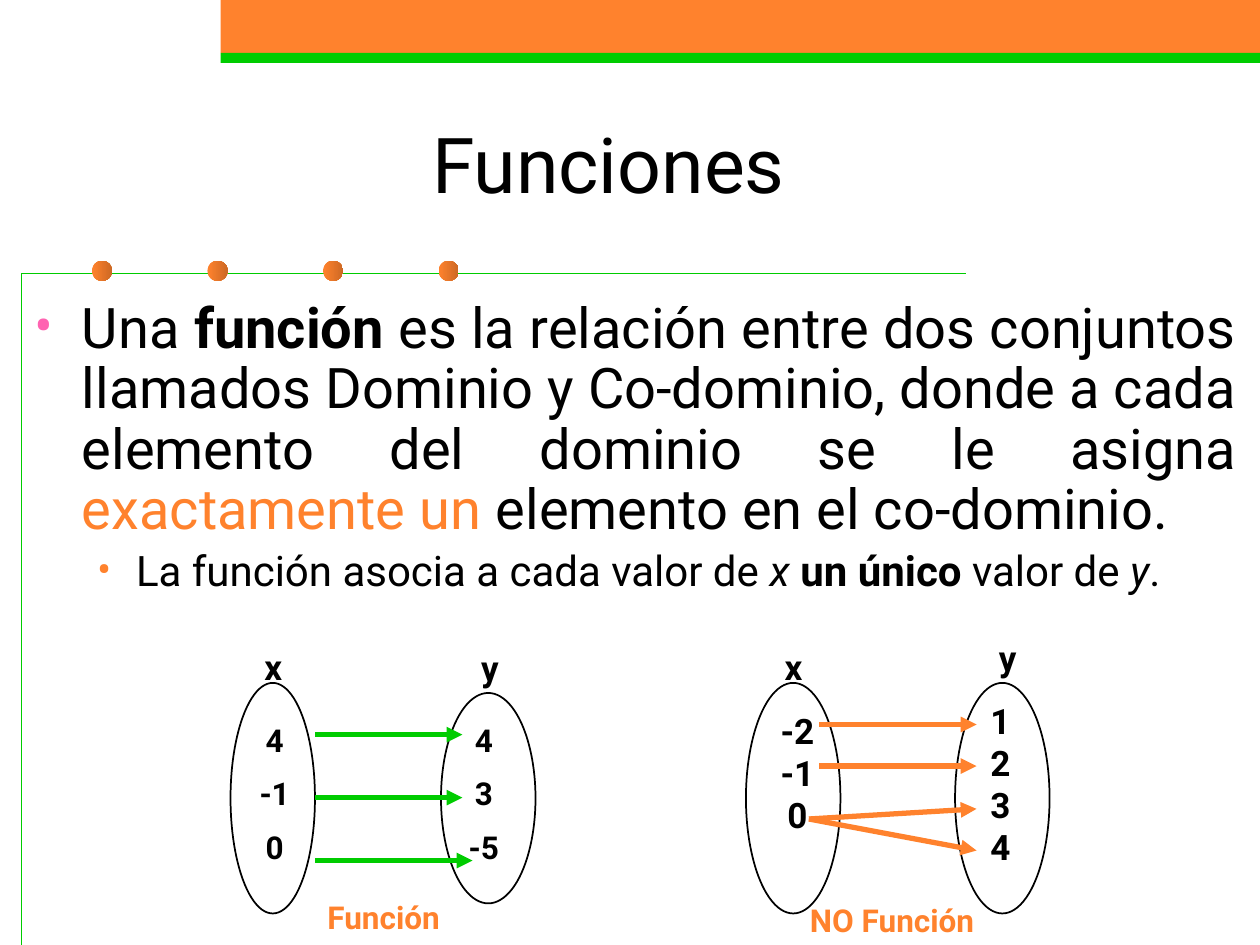
from lxml import etree
from pptx import Presentation
from pptx.dml.color import RGBColor
from pptx.enum.shapes import MSO_CONNECTOR, MSO_SHAPE
from pptx.enum.text import MSO_ANCHOR, MSO_AUTO_SIZE, PP_ALIGN
from pptx.oxml.ns import qn
from pptx.util import Inches, Pt

RECT, OVAL, LINE = MSO_SHAPE.RECTANGLE, MSO_SHAPE.OVAL, MSO_CONNECTOR.STRAIGHT
LEFT, CENTER, JUST = PP_ALIGN.LEFT, PP_ALIGN.CENTER, PP_ALIGN.JUSTIFY
MIDDLE, TOP, FIXED = MSO_ANCHOR.MIDDLE, MSO_ANCHOR.TOP, MSO_AUTO_SIZE.NONE
FONT = "Roboto"
HEX = {"orange": "FF822D", "brown": "CD6924", "green": "00CC00",
       "pink": "FF63B1", "black": "000000"}
RGB = {name: RGBColor.from_string(code) for name, code in HEX.items()}

prs = Presentation()
prs.slide_width, prs.slide_height = Inches(10), Inches(7.5)
slide = prs.slides.add_slide(prs.slide_layouts[1])
shapes = slide.shapes


def add_shape(kind, box, fill=None, line=None):
    shape = shapes.add_shape(kind, *map(Inches, box))
    shape.shadow.inherit = False
    if fill:
        shape.fill.solid()
        shape.fill.fore_color.rgb = RGB[fill]
    else:
        shape.fill.background()
    if line:
        shape.line.color.rgb = RGB[line]
        shape.line.width = Pt(1)
    else:
        shape.line.fill.background()
    return shape


def add_text(lines, box, size, color="black", align=LEFT, gap=0, wrap=True):
    frame = shapes.add_textbox(*map(Inches, box)).text_frame
    frame.word_wrap = wrap
    frame.text = "\n".join(lines)
    for i, par in enumerate(frame.paragraphs):
        par.alignment = align
        if i and gap:
            par.space_before = Pt(gap)
        font = par.runs[0].font
        font.name, font.size, font.bold = FONT, Pt(size), True
        font.color.rgb = RGB[color]


# Top band
add_shape(RECT, (1.75, 0, 8.25, 0.42), "orange")
add_shape(RECT, (1.75, 0.42, 8.25, 0.08), "green")

# Corner rule with beads
path = shapes.build_freeform(Inches(0.17), Inches(7.5))
path.add_line_segments([(Inches(0.17), Inches(2.17)),
                        (Inches(7.67), Inches(2.17))], close=False)
rule = path.convert_to_shape()
rule.shadow.inherit = False
rule.fill.background()
rule.line.color.rgb = RGB["green"]
rule.line.width = Pt(0.75)
for i in range(4):
    bead = add_shape(OVAL, (0.73 + i * 0.917, 2.07, 0.16, 0.16))
    bead.fill.gradient()
    bead.fill.gradient_angle = 0
    for stop, name in zip(bead.fill.gradient_stops, ("orange", "brown")):
        stop.color.rgb = RGB[name]

# Title
title = shapes.title
title.left, title.top, title.width, title.height = map(
    Inches, (0.58, 0.67, 8.5, 1.25))
frame = title.text_frame
frame.text = "Funciones"
frame.auto_size, frame.vertical_anchor = FIXED, MIDDLE
frame.paragraphs[0].alignment = CENTER
font = frame.paragraphs[0].runs[0].font
font.name, font.size, font.color.rgb = FONT, Pt(44), RGB["black"]

# Definition: (text, style), with b bold, i italic, o orange
items = [
    (32, "pink", 0.38, 0.38, 0, [
        ("Una ", ""), ("función", "b"),
        (" es la relación entre dos conjuntos llamados Dominio y Co-dominio, "
         "donde a cada elemento del dominio se le asigna ", ""),
        ("exactamente un", "o"), (" elemento en el co-dominio.", "")]),
    (24, "orange", 0.81, 0.31, 4.8, [
        ("La función asocia a cada valor de ", ""), ("x ", "i"),
        ("un único", "b"), (" valor de ", ""), ("y", "i"), (".", "")]),
]
body = slide.placeholders[1]
body.left, body.top, body.width, body.height = map(
    Inches, (0.17, 2.33, 9.75, 3.33))
frame = body.text_frame
frame.auto_size, frame.vertical_anchor = FIXED, TOP
for level, (size, dot, margin, hang, gap, parts) in enumerate(items):
    par = frame.add_paragraph() if level else frame.paragraphs[0]
    par.level = level
    props = par._p.get_or_add_pPr()
    props.set("marL", str(Inches(margin)))
    props.set("indent", str(-Inches(hang)))
    tint = etree.SubElement(props, qn("a:buClr"))
    etree.SubElement(tint, qn("a:srgbClr"), val=HEX[dot])
    etree.SubElement(props, qn("a:buFont"), typeface=FONT)
    etree.SubElement(props, qn("a:buChar"), char="•")
    par.alignment, par.line_spacing, par.space_before = JUST, 0.9, Pt(gap)
    for text, style in parts:
        run = par.add_run()
        run.text = text
        font = run.font
        font.name, font.size = FONT, Pt(size)
        font.bold, font.italic = style == "b", style == "i"
        font.color.rgb = RGB["orange" if style == "o" else "black"]

# Sets
for box in [(1.83, 5.42, 0.67, 1.83), (3.5, 5.5, 0.75, 1.67),
            (5.92, 5.42, 0.75, 1.83), (7.58, 5.42, 0.75, 1.83)]:
    add_shape(OVAL, box, line="black")

# Members of each set
add_text(["4", "-1", "0"], (1.92, 5.67, 0.52, 1.3), 18, align=CENTER, gap=9)
add_text(["4", "3", "-5"], (3.58, 5.67, 0.52, 1.3), 18, align=CENTER, gap=9)
add_text(["-2", "-1", "0"], (6.08, 5.58, 0.5, 1.1), 20, align=CENTER,
         wrap=False)
add_text(["1", "2", "3", "4"], (7.75, 5.5, 0.38, 1.43), 20, align=CENTER,
         wrap=False)

# Arrows from x to y
arrows = [
    ("green", 2.5, 5.83, 3.67, 5.83),
    ("green", 2.5, 6.33, 3.67, 6.33),
    ("green", 2.5, 6.83, 3.75, 6.83),
    ("orange", 6.5, 5.75, 7.75, 5.75),
    ("orange", 6.5, 6.08, 7.75, 6.08),
    ("orange", 6.42, 6.5, 7.75, 6.42),
    ("orange", 6.42, 6.5, 7.75, 6.75),
]
for color, *ends in arrows:
    arrow = shapes.add_connector(LINE, *map(Inches, ends))
    arrow.line.color.rgb = RGB[color]
    arrow.line.width = Pt(3)
    etree.SubElement(arrow.line._get_or_add_ln(), qn("a:tailEnd"),
                     type="triangle")
    etree.SubElement(arrow._element.spPr, qn("a:effectLst"))

# Set names and captions
for name, left, top in [("x", 2, 5.07), ("y", 3.72, 5.08),
                        ("x", 6.13, 5.07), ("y", 7.83, 5)]:
    add_text([name], (left, top, 0.37, 0.43), 20, wrap=False)
add_text(["Función"], (2.5, 7.08, 1.25, 0.4), 18, "orange")
add_text(["NO Función"], (6.33, 7.1, 1.83, 0.4), 18, "orange")

prs.save("out.pptx")
